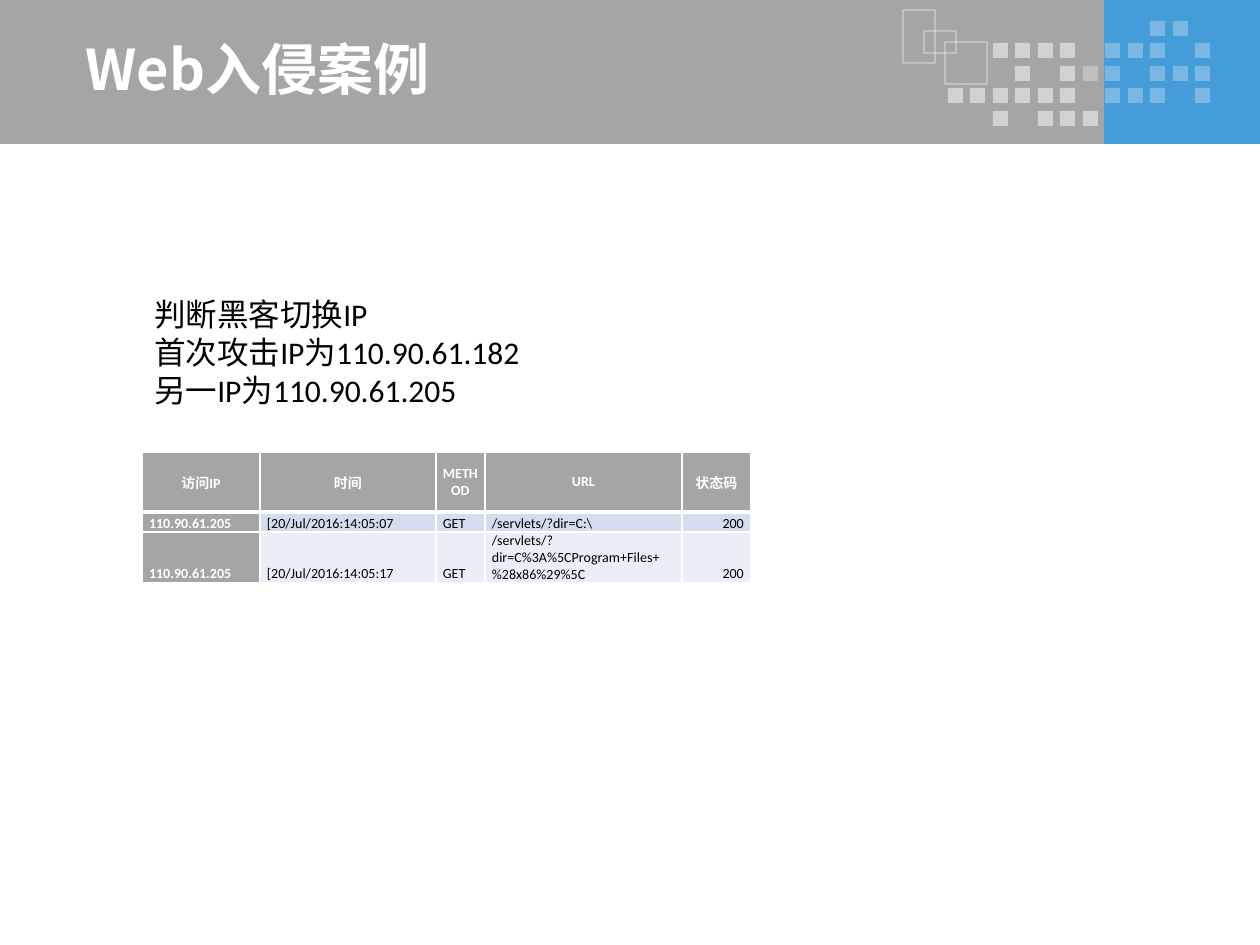
from lxml.etree import SubElement
from pptx import Presentation
from pptx.dml.color import RGBColor
from pptx.enum.shapes import MSO_SHAPE
from pptx.enum.text import MSO_ANCHOR, MSO_AUTO_SIZE, PP_ALIGN
from pptx.oxml.ns import qn
from pptx.util import Emu, Pt

SCALE = 914400 / 126
WHITE, BLACK, GREY, BLUE = "FFFFFF", "000000", "A5A5A5", "449CD8"
LATIN, HAN = "Calibri", "Noto Sans CJK SC"

# Header squares: * is brighter, o is fainter
DOTS = [
    ".........oo.",
    "..****.ooo.o",
    "...*.*oo.ooo",
    "******.ooo.o",
    "..*.***.....",
]
ALPHA = {"*": 50, "o": 29}
FRAMES = [(903, 10, 32, 53), (924, 31, 32, 22), (945, 42, 42, 42)]

LINES = ["判断黑客切换IP", "首次攻击IP为110.90.61.182", "另一IP为110.90.61.205"]
COLS = [118, 176, 49, 197, 69]
ROWS = [60, 20, 41]
BANDS = [GREY, "D2DEEF", "EAEFF7"]
CELLS = [
    ["访问IP", "时间", "METHOD", "URL", "状态码"],
    ["110.90.61.205", "[20/Jul/2016:14:05:07", "GET",
     "/servlets/?dir=C:\\", "200"],
    ["110.90.61.205", "[20/Jul/2016:14:05:17", "GET",
     "/servlets/?dir=C%3A%5CProgram+Files+%28x86%29%5C", "200"],
]


def px(num):
    return Emu(round(num * SCALE))


def color(code):
    return RGBColor.from_string(code)


def add_run(para, text, size, code, bold=False, face=LATIN):
    run = para.add_run()
    run.text = text
    font = run.font
    font.size, font.bold, font.name = Pt(size), bold, face
    font.color.rgb = color(code)
    SubElement(font._element, qn("a:ea"), typeface=HAN)


def add_rect(slide, box, fill=None, line=None, alpha=100):
    rect = slide.shapes.add_shape(MSO_SHAPE.RECTANGLE, *map(px, box))
    rect.shadow.inherit = False
    if fill:
        rect.fill.solid()
        rect.fill.fore_color.rgb = color(fill)
    else:
        rect.fill.background()
    if line:
        rect.line.color.rgb = color(line)
        rect.line.width = Pt(0.75)
    else:
        rect.line.fill.background()
    if alpha < 100:
        for clr in rect.element.iter(qn("a:srgbClr")):
            SubElement(clr, qn("a:alpha"), val=str(alpha * 1000))


def add_header(slide):
    add_rect(slide, (1104, 0, 156, 144), BLUE)
    add_rect(slide, (0, 0, 1104, 144), GREY)
    for row, marks in enumerate(DOTS):
        for col, mark in enumerate(marks):
            if mark in ALPHA:
                box = (948 + col * 45 // 2, 21 + row * 45 // 2, 15, 15)
                add_rect(slide, box, WHITE, alpha=ALPHA[mark])
    for box in FRAMES:
        add_rect(slide, box, line=WHITE, alpha=50)


def add_title(slide, text):
    title = slide.shapes.title
    title.element.getparent().append(title.element)  # bring to front
    title.left, title.top, title.width, title.height = map(px, (73, 35, 978, 67))
    frame = title.text_frame
    frame.auto_size = MSO_AUTO_SIZE.NONE
    frame.vertical_anchor = MSO_ANCHOR.MIDDLE
    para = frame.paragraphs[0]
    para.alignment = PP_ALIGN.LEFT
    add_run(para, text, 32, WHITE, True, HAN)


def add_text(slide, box, lines):
    frame = slide.shapes.add_textbox(*map(px, box)).text_frame
    frame.word_wrap = True
    frame.auto_size = MSO_AUTO_SIZE.SHAPE_TO_FIT_TEXT
    for num, text in enumerate(lines):
        para = frame.add_paragraph() if num else frame.paragraphs[0]
        add_run(para, text, 18, BLACK)


def add_edges(cell, top, base):
    props = cell._tc.get_or_add_tcPr()
    for side, width in zip("LRTB", (1, 1, top, base)):
        edge = SubElement(props, qn("a:ln" + side), w=str(Pt(width)))
        fill = SubElement(edge, qn("a:solidFill"))
        SubElement(fill, qn("a:srgbClr"), val=WHITE)


def set_cell(cell, text, row, col):
    head, key = row == 0, row == 0 or col == 0
    add_edges(cell, 3 if row == 1 else 1, 3 if head else 1)
    cell.fill.solid()
    cell.fill.fore_color.rgb = color(GREY if key else BANDS[row])
    cell.margin_left = cell.margin_right = px(7)
    cell.margin_top = cell.margin_bottom = 0
    cell.vertical_anchor = MSO_ANCHOR.MIDDLE if head else MSO_ANCHOR.BOTTOM
    para = cell.text_frame.paragraphs[0]
    if head:
        para.alignment = PP_ALIGN.CENTER
    elif col == len(COLS) - 1:
        para.alignment = PP_ALIGN.RIGHT
    add_run(para, text, 8, WHITE if key else BLACK, key)


def add_grid(slide, left, top):
    box = (left, top, sum(COLS), sum(ROWS))
    grid = slide.shapes.add_table(len(ROWS), len(COLS), *map(px, box)).table
    for col, width in zip(grid.columns, COLS):
        col.width = px(width)
    for row, high in zip(grid.rows, ROWS):
        row.height = px(high)
    for row, texts in enumerate(CELLS):
        for col, text in enumerate(texts):
            set_cell(grid.cell(row, col), text, row, col)


def main():
    deck = Presentation()
    deck.slide_width, deck.slide_height = px(1260), px(945)
    slide = deck.slides.add_slide(deck.slide_layouts[5])
    add_header(slide)
    add_title(slide, "Web入侵案例")
    add_text(slide, (142, 289, 630, 127), LINES)
    add_grid(slide, 142, 452)
    deck.save("out.pptx")


if __name__ == "__main__":
    main()
